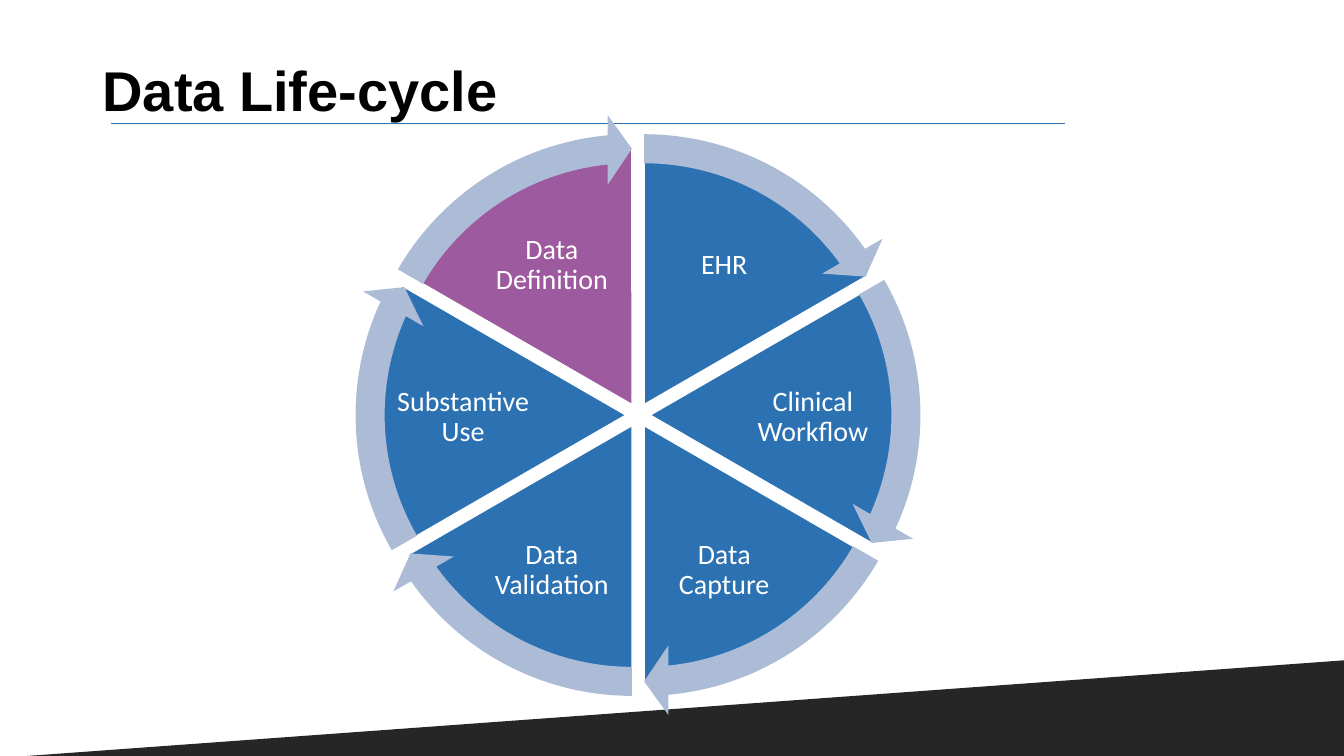
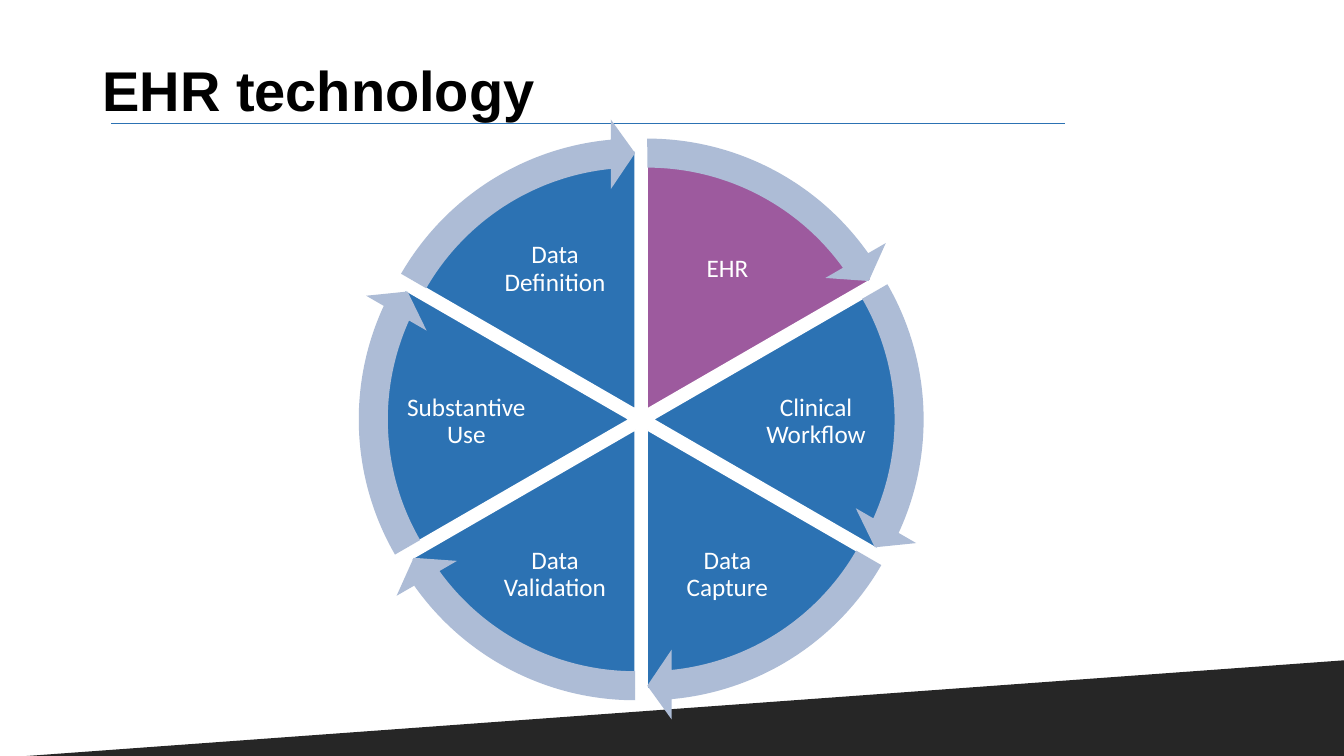
from math import cos, sin, tan, radians

from lxml import etree
from pptx import Presentation
from pptx.dml.color import RGBColor
from pptx.enum import shapes as kinds, text as txt
from pptx.oxml import ns
from pptx.util import Cm, Pt

BLUE, PLUM, PALE = "2C72B3", "9D5A9E", "ADBCD6"
DARK, BLACK, WHITE = "262626", "000000", "FFFFFF"
WIDE, HIGH = 33.87, 19.05

# Step and its label centre, in radii from the tip of the sector
STEPS = [
    ("EHR", 0.31, -0.54),
    ("Clinical Workflow", 0.63, 0.01),
    ("Data Capture", 0.31, 0.56),
    ("Data Validation", -0.31, 0.56),
    ("Substantive Use", -0.63, 0.01),
    ("Data Definition", -0.31, -0.54),
]

# Title, highlighted step, wheel left and top, label size
PAGES = [
    ("Data Life-cycle", "Data Definition", 9.57, 3.95, 20),
    ("EHR technology", "EHR", 9.65, 4.06, 18),
]


def rgb(code):
    return RGBColor.from_string(code)


def paint(shape, code):
    shape.shadow.inherit = False
    shape.fill.solid()
    shape.fill.fore_color.rgb = rgb(code)
    shape.line.fill.background()


def style(para, font, size, code, bold=False):
    para.line_spacing = 0.9
    for run in para.runs:
        run.font.name = font
        run.font.size = Pt(size)
        run.font.bold = bold
        run.font.color.rgb = rgb(code)


def shade(line):
    """Give the line a soft shadow."""
    fx = etree.SubElement(line.element.spPr, ns.qn("a:effectLst"))
    cast = etree.SubElement(fx, ns.qn("a:outerShdw"), blurRad=str(Pt(4)),
                            dist=str(Pt(3)), dir=str(45 * 60000))
    hue = etree.SubElement(cast, ns.qn("a:srgbClr"), val=BLACK)
    etree.SubElement(hue, ns.qn("a:alpha"), val="40000")


def frame(layout, slide):
    """Draw the shared band and rule, then hand them to the layout."""
    # Slanted band at the foot
    band = slide.shapes.add_shape(kinds.MSO_SHAPE.RIGHT_TRIANGLE, 0,
                                  Cm(16.64), Cm(WIDE), Cm(2.46))
    band.element.spPr.xfrm.set("flipH", "1")
    paint(band, DARK)

    # Rule under the title
    rule = slide.shapes.add_connector(kinds.MSO_CONNECTOR.STRAIGHT,
                                      Cm(2.8), Cm(3.1), Cm(26.83), Cm(3.1))
    rule.line.color.rgb = rgb(BLUE)
    rule.line.width = Pt(0.5)
    shade(rule)

    for part in (band, rule):
        layout.shapes.element.append(part.element)

    # Title place
    title = layout.placeholders[0]
    title.left, title.top = Cm(2.33), Cm(1.32)
    title.width, title.height = Cm(29.21), Cm(2.06)


def head(slide, words):
    box = slide.shapes.title.text_frame
    box.text = words
    box.vertical_anchor = txt.MSO_ANCHOR.MIDDLE
    para = box.paragraphs[0]
    para.alignment = txt.PP_ALIGN.LEFT
    style(para, "Arial", 40, BLACK, True)


def polar(x, y, dist, angle):
    return x + dist * cos(radians(angle)), y + dist * sin(radians(angle))


def bow(piece, rad, start):
    """Outline a sector with one true curve, in the box of its circle."""
    hub, end = (rad, rad), start + 60
    pull = 4 / 3 * tan(radians(15)) * rad
    first, last = polar(*hub, rad, start), polar(*hub, rad, end)
    grips = polar(*first, pull, start + 90), polar(*last, pull, end - 90)
    track = piece.element.find(".//" + ns.qn("a:path"))
    for step in list(track):
        track.remove(step)
    track.set("w", str(Cm(2 * rad)))
    track.set("h", str(Cm(2 * rad)))
    for tag, points in (("a:moveTo", [first]),
                        ("a:cubicBezTo", [*grips, last]),
                        ("a:lnTo", [hub]), ("a:close", [])):
        step = etree.SubElement(track, ns.qn(tag))
        for x, y in points:
            etree.SubElement(step, ns.qn("a:pt"), x=str(Cm(x)), y=str(Cm(y)))


def wedge(group, tip, rad, start, step, code, size):
    """One sector round its tip, with its label set by the margins."""
    words, across, down = step
    ends = [polar(*tip, rad, a) for a in (start, start + 60)]
    pen = group.shapes.build_freeform(Cm(tip[0]), Cm(tip[1]))
    pen.add_line_segments([(Cm(x), Cm(y)) for x, y in ends], close=True)
    piece = pen.convert_to_shape()
    piece.left, piece.top = Cm(tip[0] - rad), Cm(tip[1] - rad)
    piece.width = piece.height = Cm(2 * rad)
    bow(piece, rad, start)
    paint(piece, code)
    piece.line.color.rgb = rgb(WHITE)
    piece.line.width = Pt(1)

    # Label area
    half, tall = 0.26, 0.19
    box = piece.text_frame
    box.margin_left = Cm(rad * (1 + across - half))
    box.margin_right = Cm(rad * (1 - across - half))
    box.margin_top = Cm(rad * (1 + down - tall))
    box.margin_bottom = Cm(rad * (1 - down - tall))
    box.word_wrap = True
    box.vertical_anchor = txt.MSO_ANCHOR.MIDDLE
    box.text = words
    para = box.paragraphs[0]
    para.alignment = txt.PP_ALIGN.CENTER
    style(para, "Calibri", size, WHITE)


def arrow(group, tip, rad, start):
    """Curved arrow round one sector; 0.6 units make one degree."""
    side = 2.25 * rad
    bend = group.shapes.add_shape(
        kinds.MSO_SHAPE.CIRCULAR_ARROW, Cm(tip[0] - side / 2),
        Cm(tip[1] - side / 2), Cm(side), Cm(side))
    turn = 5.46
    values = (0.05, turn * 0.6, (start + 60 - turn) % 360 * 0.6,
              start % 360 * 0.6, 0.06)
    for k, value in enumerate(values):
        bend.adjustments[k] = value
    paint(bend, PALE)


def wheel(slide, left, top, side, focus, size):
    """Cycle of six sectors, each pushed out a little from the hub."""
    rad = side / 2
    group = slide.shapes.add_group_shape()
    starts = [270 + 60 * k for k in range(len(STEPS))]
    tips = [polar(left + rad, top + rad, 0.047 * rad, a + 30) for a in starts]
    for step, start, tip in zip(STEPS, starts, tips):
        code = PLUM if step[0] == focus else BLUE
        wedge(group, tip, rad, start, step, code, size)
    for start, tip in zip(starts, tips):
        arrow(group, tip, rad, start)


def main():
    deck = Presentation()
    deck.slide_width, deck.slide_height = Cm(WIDE), Cm(HIGH)
    layout = deck.slide_layouts[5]
    for k, (words, focus, left, top, size) in enumerate(PAGES):
        slide = deck.slides.add_slide(layout)
        if k == 0:
            frame(layout, slide)
        head(slide, words)
        wheel(slide, left, top, 13.02, focus, size)
    deck.save("out.pptx")


if __name__ == "__main__":
    main()
